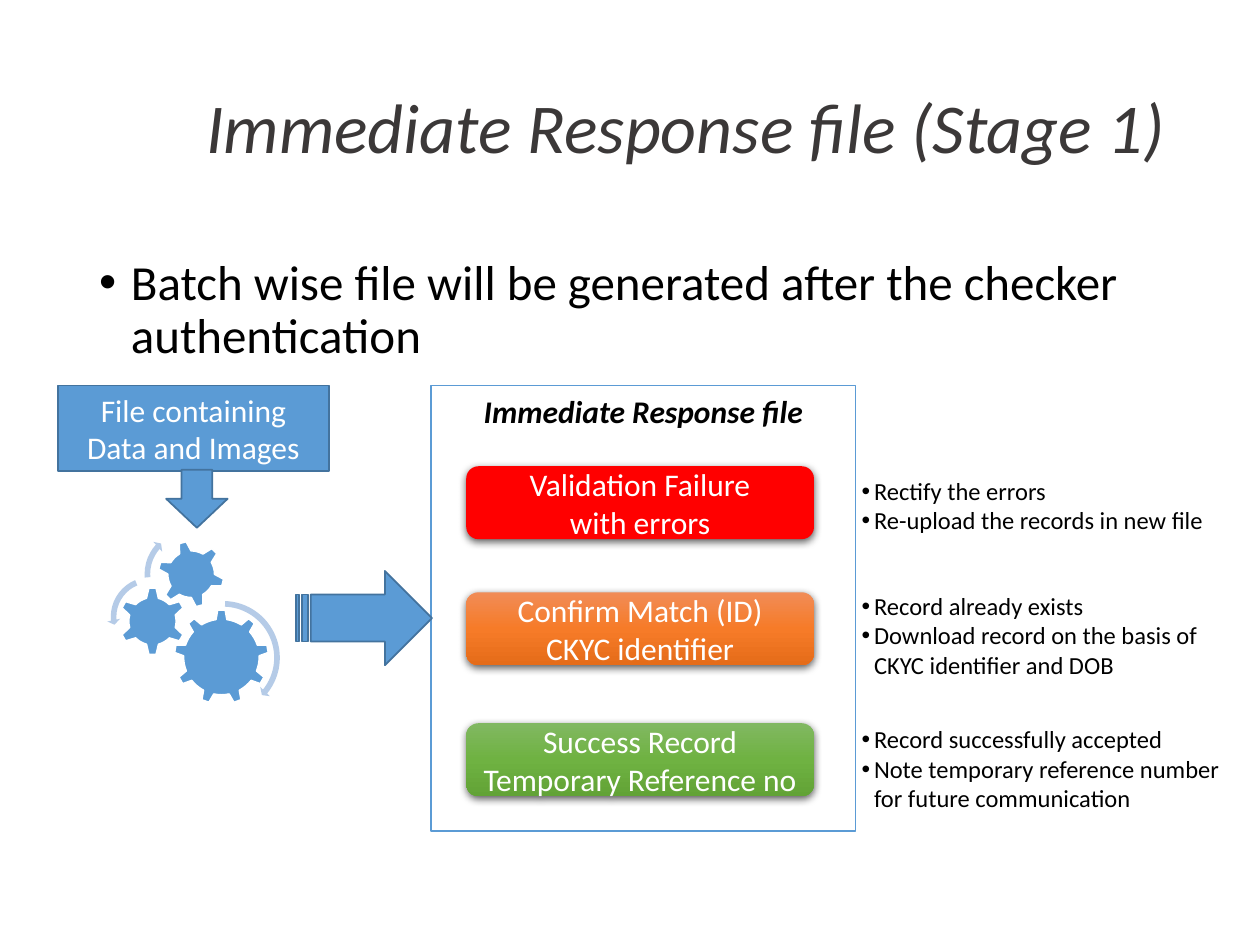
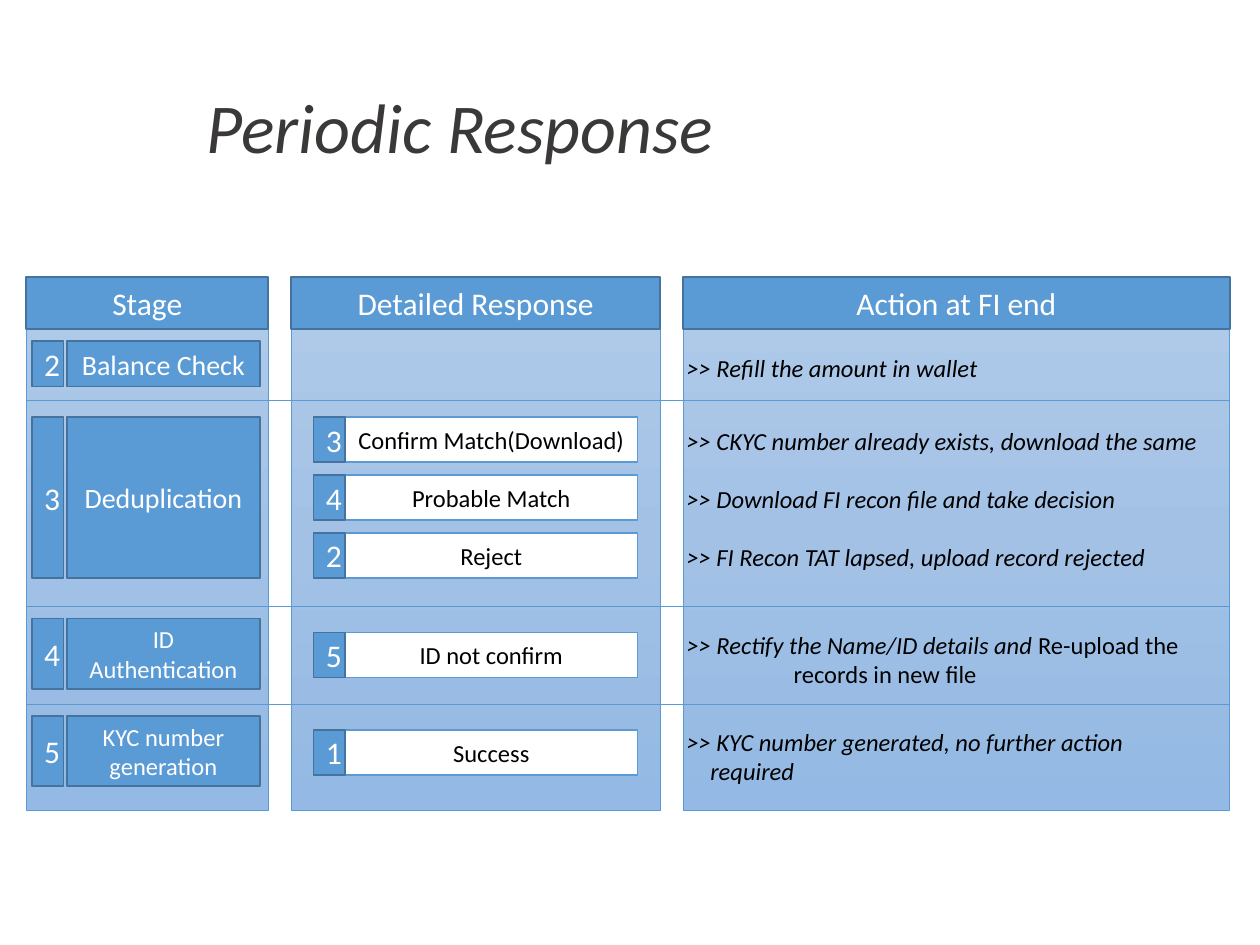
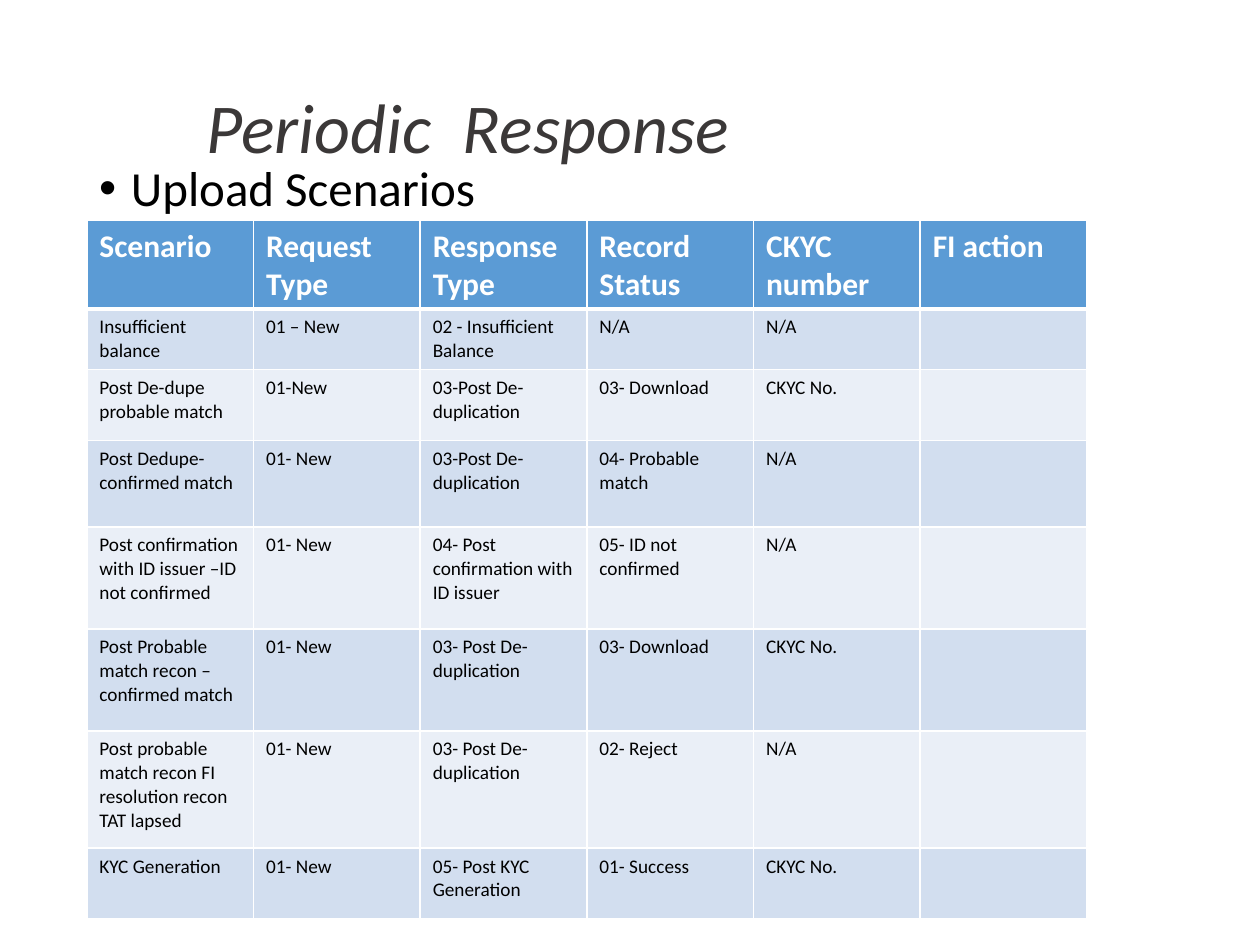
from lxml.etree import SubElement
from pptx import Presentation
from pptx.dml.color import RGBColor
from pptx.enum.shapes import MSO_CONNECTOR, MSO_SHAPE as SHAPE
from pptx.enum.text import MSO_ANCHOR as ANCHOR, PP_ALIGN as ALIGN
from pptx.oxml.ns import qn
from pptx.util import Cm, Pt

FONT = "Calibri"
COLORS = {
    "title": "3B3838", "text": "000000", "white": "FFFFFF",
    "blue": "5B9BD5", "blue_edge": "43739E", "pale_blue": "B5CBE7",
    "red": "FF0000", "band_dark": "D2DEEF", "band_light": "EAEFF7",
}
GRADIENTS = {
    "orange": ("F18C57", "F67B28", "E56C19"),
    "green": ("81B861", "6FB242", "62A336"),
    "panel": ("B1CBE9", "A3C1E5", "93B9E4"),
}

# Slide 1: top, fill, card text, notes beside the card
OUTCOMES = [
    (9.4, "red", "Validation Failure\nwith errors", 9.47,
     ["Rectify the errors", "Re-upload the records in new file"]),
    (11.94, "orange", "Confirm Match (ID)\nCKYC identifier", 11.79,
     ["Record already exists",
      "Download record on the basis of CKYC identifier and DOB"]),
    (14.58, "green", "Success Record\nTemporary Reference no", 14.48,
     ["Record successfully accepted",
      "Note temporary reference number for future communication"]),
]
# shape, left, top, size, rotation
GEARS = [
    (SHAPE.GEAR_9, 3.51, 12.29, 1.91, 0),
    (SHAPE.GEAR_6, 2.39, 11.84, 1.37, 0),
    (SHAPE.GEAR_6, 3.18, 10.9, 1.35, 345),
]
# shape, left, top, size, adjustments
ORBITS = [
    (SHAPE.CIRCULAR_ARROW, 3.28, 12.04, 2.44,
     (0.047, 2.99, 23.373, 163.223, 0.055)),
    (SHAPE.LEFT_CIRCULAR_ARROW, 2.16, 11.56, 1.75,
     (0.065, 4.3, 104.891, 148.378, 0.075)),
    (SHAPE.CIRCULAR_ARROW, 2.84, 10.62, 1.9,
     (0.06, 3.941, 133.138, 105.082, 0.07)),
]

# Slide 2
COLUMNS = [("Stage", 0.53, 4.88), ("Detailed Response", 5.87, 7.44),
           ("Action at FI end", 13.77, 11.02)]
DIVIDERS = [8.08, 12.22, 14.2]
# number, label, size, top, height
STAGES = [
    ("2", "Balance Check", 16, 6.88, 0.91),
    ("3", "Deduplication", 16, 8.41, 3.25),
    ("4", "ID Authentication", 14, 12.47, 1.42),
    ("5", "KYC number generation", 14, 14.43, 1.42),
]
# number, label, top
RESPONSES = [
    ("3", "Confirm Match(Download)", 8.41),
    ("4", "Probable Match", 9.58),
    ("2", "Reject", 10.74),
    ("5", "ID not confirm", 12.75),
    ("1", "Success", 14.71),
]
# top, text
ACTIONS = [
    (6.99, ">> Refill the amount in wallet"),
    (8.47, ">> CKYC number already exists, download the same"),
    (9.63, ">> Download FI recon file and take decision"),
    (10.8, ">> FI Recon TAT lapsed, upload record rejected"),
    (14.53, ">> KYC number generated, no further action required"),
]

# Slide 3
ROW_HEIGHTS = [1.77, 1.22, 1.43, 1.74, 2.06, 2.06, 2.36, 1.43]
SCENARIOS = [
    ("Scenario", "Request Type", "Response Type", "Record Status",
     "CKYC number", "FI action"),
    ("Insufficient balance", "01 – New", "02 - Insufficient Balance", "N/A", "N/A", ""),
    ("Post De-dupe probable match", "01-New", "03-Post De-duplication",
     "03- Download", "CKYC No.", ""),
    ("Post Dedupe-confirmed match", "01- New", "03-Post De-duplication",
     "04- Probable match", "N/A", ""),
    ("Post confirmation with ID issuer –ID not confirmed", "01- New",
     "04- Post confirmation with ID issuer", "05- ID not confirmed", "N/A", ""),
    ("Post Probable match recon – confirmed match", "01- New",
     "03- Post De-duplication", "03- Download", "CKYC No.", ""),
    ("Post probable match recon FI resolution recon TAT lapsed", "01- New",
     "03- Post De- duplication", "02- Reject", "N/A", ""),
    ("KYC Generation", "01- New", "05- Post KYC Generation", "01- Success",
     "CKYC No.", ""),
]


def rgb(name):
    return RGBColor.from_string(COLORS[name])


def format_text(tf, size, color="text", bold=False, italic=False, align=ALIGN.LEFT):
    for p in tf.paragraphs:
        p.alignment = align
        for r in p.runs:
            r.font.name, r.font.size = FONT, Pt(size)
            r.font.bold, r.font.italic = bold, italic
            r.font.color.rgb = rgb(color)


def set_indent(p, left, hanging=0.0, bullet=False):
    pPr = p._p.get_or_add_pPr()
    pPr.set("marL", str(Cm(left)))
    pPr.set("indent", str(-Cm(hanging)))
    if bullet:
        SubElement(pPr, qn("a:buFont"), typeface="Arial")
        SubElement(pPr, qn("a:buChar"), char="•")


def add_text(slide, text, left, top, width, height, size, **style):
    tf = slide.shapes.add_textbox(Cm(left), Cm(top), Cm(width), Cm(height)).text_frame
    tf.word_wrap = True
    tf.text = text
    format_text(tf, size, **style)
    return tf


def add_title(slide, text):
    tf = add_text(slide, text, 3.91, 1.7, 20.24, 1.88, 40, color="title", italic=True)
    tf.vertical_anchor = ANCHOR.MIDDLE
    tf.paragraphs[0].line_spacing = 0.9


def add_lead(slide, text, top):
    """Large bulleted statement under the title."""
    tf = add_text(slide, text, 1.75, top, 21.89, 2.5, 28)
    p = tf.paragraphs[0]
    p.line_spacing = 0.9
    set_indent(p, 0.64, 0.64, bullet=True)


def set_fill(sp, fill):
    """Fill with a plain colour or, for a name in GRADIENTS, top to bottom."""
    if fill not in GRADIENTS:
        sp.fill.solid()
        sp.fill.fore_color.rgb = rgb(fill)
        return
    sp.fill.gradient()
    sp.fill.gradient_angle = 270
    gs_list = sp._element.spPr.find(".//" + qn("a:gsLst"))
    gs_list.clear()
    for pos, color in zip((0, 50000, 100000), GRADIENTS[fill]):
        gs = SubElement(gs_list, qn("a:gs"), pos=str(pos))
        SubElement(gs, qn("a:srgbClr"), val=color)


def add_shape(slide, kind, left, top, width, height, fill="blue",
              line="blue_edge", line_width=1):
    sp = slide.shapes.add_shape(kind, Cm(left), Cm(top), Cm(width), Cm(height))
    sp.shadow.inherit = False
    set_fill(sp, fill)
    if line:
        sp.line.color.rgb = rgb(line)
        sp.line.width = Pt(line_width)
    else:
        sp.line.fill.background()
    return sp


def add_box(slide, text, left, top, width, height, size=18, color="white",
            kind=SHAPE.FLOWCHART_PROCESS, **look):
    sp = add_shape(slide, kind, left, top, width, height, **look)
    sp.text_frame.text = text
    format_text(sp.text_frame, size, color, align=ALIGN.CENTER)
    return sp


def add_drop_shadow(sp):
    effects = sp._element.spPr.find(qn("a:effectLst"))
    shadow = SubElement(effects, qn("a:outerShdw"), blurRad=str(Pt(4.5)),
                        dist=str(Pt(1.5)), dir="5400000", algn="ctr", rotWithShape="0")
    color = SubElement(shadow, qn("a:srgbClr"), val=COLORS["text"])
    SubElement(color, qn("a:alpha"), val="63000")


def add_divider(slide, left, right, y):
    line = slide.shapes.add_connector(MSO_CONNECTOR.STRAIGHT,
                                      Cm(left), Cm(y), Cm(right), Cm(y))
    line.line.color.rgb = rgb("blue")
    line.line.width = Pt(0.5)
    SubElement(line._element.spPr, qn("a:effectLst"))


def add_notes(slide, notes, top):
    tf = add_text(slide, "\n".join(notes), 17.12, top, 8.03, 0.85 + 0.6 * len(notes), 14)
    for p in tf.paragraphs:
        set_indent(p, 0.25, 0.25, bullet=True)


def set_borders(cell, bottom):
    tcPr = cell._tc.get_or_add_tcPr()
    for side, width in (("L", 1), ("R", 1), ("T", 1), ("B", bottom)):
        ln = SubElement(tcPr, qn("a:ln" + side), w=str(Pt(width)))
        SubElement(SubElement(ln, qn("a:solidFill")), qn("a:srgbClr"), val=COLORS["white"])


def add_table(slide, rows, left, top, column_width):
    shape = slide.shapes.add_table(len(rows), len(rows[0]), Cm(left), Cm(top),
                                   Cm(column_width * len(rows[0])), Cm(sum(ROW_HEIGHTS)))
    table = shape.table
    for column in table.columns:
        column.width = Cm(column_width)
    for i, values in enumerate(rows):
        header = i == 0
        table.rows[i].height = Cm(ROW_HEIGHTS[i])
        fill = "blue" if header else "band_dark" if i % 2 else "band_light"
        for j, value in enumerate(values):
            cell = table.cell(i, j)
            set_borders(cell, 3 if header or i == 0 else 1)
            set_fill(cell, fill)
            cell.text = value
            format_text(cell.text_frame, 18 if header else 11,
                        "white" if header else "text", bold=header)


def build_immediate_response(slide):
    add_title(slide, "Immediate Response file (Stage 1)")
    add_lead(slide, "Batch wise file will be generated after the checker authentication", 5.08)
    add_box(slide, "File containing\nData and Images", 1.17, 7.77, 5.46, 1.73)

    frame = add_box(slide, "Immediate Response file", 8.69, 7.77, 8.56, 8.99,
                    color="text", kind=SHAPE.RECTANGLE, fill="white", line="blue")
    frame.text_frame.vertical_anchor = ANCHOR.TOP
    format_text(frame.text_frame, 18, bold=True, italic=True, align=ALIGN.CENTER)

    for top, fill, text, notes_top, notes in OUTCOMES:
        card = add_box(slide, text, 9.4, top, 7.01, 1.47,
                       kind=SHAPE.ROUNDED_RECTANGLE, fill=fill, line=None)
        add_drop_shadow(card)
        add_notes(slide, notes, notes_top)

    for kind, left, top, size, rotation in GEARS:
        gear = add_shape(slide, kind, left, top, size, size, line="white")
        gear.rotation = rotation
    for kind, left, top, size, adjustments in ORBITS:
        orbit = add_shape(slide, kind, left, top, size, size, "pale_blue", None)
        for i, value in enumerate(adjustments):
            orbit.adjustments[i] = value

    add_shape(slide, SHAPE.DOWN_ARROW, 3.35, 9.47, 1.24, 1.17)
    add_shape(slide, SHAPE.STRIPED_RIGHT_ARROW, 5.97, 11.51, 2.74, 1.9)


def build_periodic_response(slide):
    add_title(slide, "Periodic Response")
    for heading, left, width in COLUMNS:
        add_shape(slide, SHAPE.RECTANGLE, left, 5.59, width, 10.74, "panel", "blue", 0.5)
        add_box(slide, heading, left, 5.59, width, 1.04, kind=SHAPE.RECTANGLE)
    for y in DIVIDERS:
        add_divider(slide, 0.53, 24.79, y)
    for number, label, size, top, height in STAGES:
        add_box(slide, number, 0.64, top, 0.64, height)
        add_box(slide, label, 1.35, top, 3.89, height, size)
    for number, label, top in RESPONSES:
        add_box(slide, label, 6.96, top, 5.89, 0.91, 14, "text", fill="white", line="blue")
        add_box(slide, number, 6.32, top, 0.64, 0.91)

    for top, text in ACTIONS:
        tf = add_text(slide, text, 13.59, top, 11.02, 0.86, 14, italic=True)
        set_indent(tf.paragraphs[0], 0.48, 0.48)
    tf = add_text(slide, ">> Rectify the Name/ID details and \nrecords in new file",
                  13.59, 12.57, 11.02, 2.06, 14)
    first, second = tf.paragraphs
    first.add_run().text = "Re-upload the"
    format_text(tf, 14)
    first.runs[0].font.italic = True
    set_indent(first, 0.48, 0.48)
    set_indent(second, 2.16)


def build_upload_scenarios(slide):
    add_title(slide, "Periodic  Response")
    add_lead(slide, "Upload Scenarios", 3.18)
    add_table(slide, SCENARIOS, 1.75, 4.45, 3.36)


def main():
    prs = Presentation()
    prs.slide_width, prs.slide_height = Cm(25.4), Cm(19.05)
    for build in (build_immediate_response, build_periodic_response,
                  build_upload_scenarios):
        build(prs.slides.add_slide(prs.slide_layouts[6]))
    prs.save("out.pptx")


if __name__ == "__main__":
    main()
